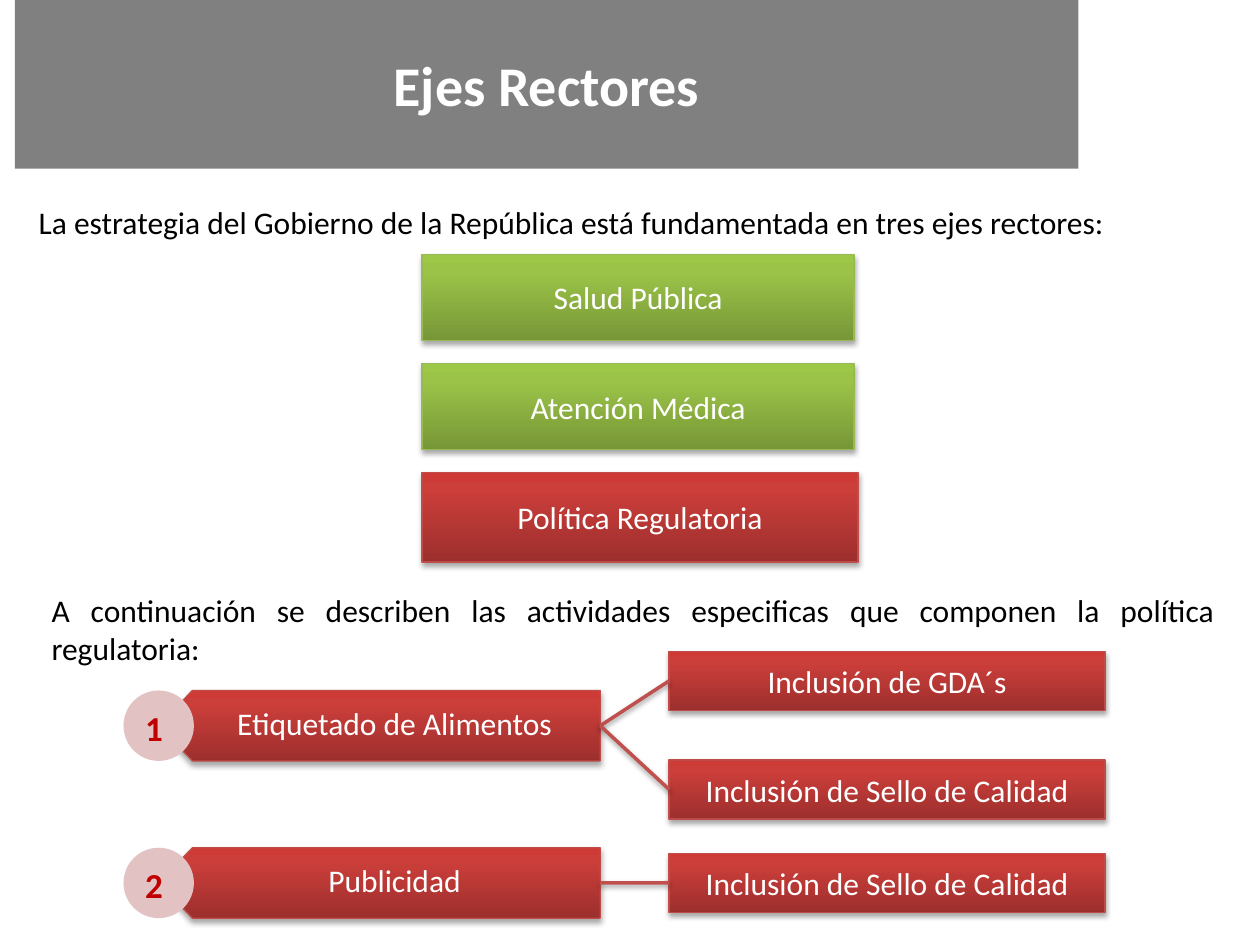
from copy import deepcopy

from lxml import etree
from pptx import Presentation
from pptx.dml.color import RGBColor
from pptx.enum.shapes import MSO_CONNECTOR, MSO_SHAPE
from pptx.enum.text import MSO_ANCHOR, MSO_AUTO_SIZE, PP_ALIGN
from pptx.oxml.ns import qn
from pptx.util import Cm, Pt

RECTANGLE, OVAL = MSO_SHAPE.RECTANGLE, MSO_SHAPE.OVAL
STRAIGHT = MSO_CONNECTOR.STRAIGHT
MIDDLE = MSO_ANCHOR.MIDDLE
NO_FIT, GROW = MSO_AUTO_SIZE.NONE, MSO_AUTO_SIZE.SHAPE_TO_FIT_TEXT
CENTER, JUSTIFY = PP_ALIGN.CENTER, PP_ALIGN.JUSTIFY
LEFT_SIDE = 1

COLORS = {
    "white": "FFFFFF", "black": "000000", "banner": "808080",
    "circle": "E2C2C2", "number": "C00000", "link": "C0504D",
    "green_line": "98B955", "red_line": "BF4C48",
}
GRADIENTS = {
    "green": ("779737", "9BC348", "9DC746"),
    "red": ("9C2F2D", "CB3E3A", "CE3B37"),
}
STOPS = (0, 0.8, 1)


def color(name):
    """Return the named colour."""
    return RGBColor.from_string(COLORS[name])


def write(shape, text, ink, size=18, bold=False, align=CENTER):
    """Put one formatted paragraph in a shape."""
    frame = shape.text_frame
    frame.word_wrap = True
    para = frame.paragraphs[0]
    para.alignment = align
    span = para.add_run()
    span.text = text
    span.font.name = "Calibri"
    span.font.size = Pt(size)
    span.font.bold = bold
    span.font.color.rgb = color(ink)
    return para


def add_shadow(shape, distance, opacity):
    """Give a shape or connector a soft shadow below it."""
    effects = etree.SubElement(shape._element.spPr, qn("a:effectLst"))
    shadow = etree.SubElement(
        effects, qn("a:outerShdw"), blurRad=str(Pt(3.1)), dist=str(Pt(distance)),
        dir="5400000", rotWithShape="0")
    tint = etree.SubElement(shadow, qn("a:srgbClr"), val=COLORS["black"])
    etree.SubElement(tint, qn("a:alpha"), val=str(opacity * 1000))


def style_block(shape, hue):
    """Apply the vertical gradient, outline and shadow of a block."""
    shape.fill.gradient()
    shape.fill.gradient_angle = 90
    stop_list = shape._element.spPr.find(".//" + qn("a:gsLst"))
    stop_list.append(deepcopy(stop_list[-1]))
    for stop, position, shade in zip(shape.fill.gradient_stops, STOPS, GRADIENTS[hue]):
        stop.position = position
        stop.color.rgb = RGBColor.from_string(shade)
    shape.line.color.rgb = color(hue + "_line")
    shape.line.width = Pt(0.75)
    add_shadow(shape, 1.8, 35)


def add_block(page, box, text, hue):
    """Add a gradient rectangle with centred text."""
    block = page.shapes.add_shape(RECTANGLE, *box)
    style_block(block, hue)
    block.text_frame.vertical_anchor = MIDDLE
    write(block, text, "white")
    return block


def add_text(page, box, text, ink="black", size=18, bold=False, align=JUSTIFY):
    """Add a wrapped text box that grows with its text."""
    label = page.shapes.add_textbox(*box)
    write(label, text, ink, size, bold, align)
    label.text_frame.auto_size = GROW


def add_banner(page, box, text):
    """Turn the title placeholder into the grey banner."""
    banner = page.shapes.title
    banner.left, banner.top, banner.width, banner.height = box
    banner.fill.solid()
    banner.fill.fore_color.rgb = color("banner")
    banner.text_frame.vertical_anchor = MIDDLE
    banner.text_frame.auto_size = NO_FIT
    write(banner, text, "white", 32, True)


def add_axes(page, left, top):
    """Stack the three guiding axes, the last one highlighted."""
    axes = (
        ("Salud Pública", "green", 8.71, 1.73),
        ("Atención Médica", "green", 8.71, 1.73),
        ("Política Regulatoria", "red", 8.79, 1.8),
    )
    for index, (text, hue, width, height) in enumerate(axes):
        box = left, top + index * Cm(2.2), Cm(width), Cm(height)
        add_block(page, box, text, hue)


def add_activity(page, box, number, text, details):
    """Add a numbered pointed bar linked to its detail blocks."""
    left, top, width, height = box
    right, bottom, middle = left + width, top + height, top + height // 2
    notch = left + Cm(0.68)
    builder = page.shapes.build_freeform(right, bottom, scale=1.0)
    builder.add_line_segments(
        [(notch, bottom), (left, middle), (notch, top), (right, top)], close=True)
    bar = builder.convert_to_shape()
    style_block(bar, "red")
    frame = bar.text_frame
    frame.vertical_anchor = MIDDLE
    frame.margin_left, frame.margin_right = Cm(0.97), Cm(0.36)
    frame.margin_top = frame.margin_bottom = Cm(0.2)
    write(bar, text, "white").line_spacing = Pt(18)

    circle = page.shapes.add_shape(OVAL, left - Cm(0.71), top, height, height)
    circle.shadow.inherit = False
    circle.fill.solid()
    circle.fill.fore_color.rgb = color("circle")
    circle.line.fill.background()
    number_box = left - Cm(1.3), top + Cm(0.2), Cm(2.41), Cm(1.12)
    add_text(page, number_box, number, "number", 20, True, CENTER)

    for detail, offset in details:
        detail_box = right + Cm(1.39), top + Cm(offset), Cm(8.79), Cm(1.19)
        block = add_block(page, detail_box, detail, "red")
        link = page.shapes.add_connector(STRAIGHT, right, middle, right, middle)
        link.end_connect(block, LEFT_SIDE)
        link.line.color.rgb = color("link")
        link.line.width = Pt(2)
        add_shadow(link, 1.6, 38)


def main():
    """Build and save the slide."""
    deck = Presentation()
    deck.slide_width, deck.slide_height = Cm(25.4), Cm(19.05)
    page = deck.slides.add_slide(deck.slide_layouts[5])
    add_banner(page, (Cm(0.3), 0, Cm(21.44), Cm(3.4)), "Ejes Rectores")
    add_text(page, (Cm(0.53), Cm(3.96), Cm(22.6), Cm(1.02)),
             "La estrategia del Gobierno de la República está fundamentada "
             "en tres ejes rectores:")
    add_axes(page, Cm(8.51), Cm(5.13))
    add_text(page, (Cm(0.79), Cm(11.79), Cm(23.95), Cm(1.8)),
             "A continuación se describen las actividades especificas que "
             "componen la política regulatoria:")
    seal = "Inclusión de Sello de Calidad"
    add_activity(page, (Cm(3.2), Cm(13.92), Cm(8.9), Cm(1.42)), "1",
                 "Etiquetado de Alimentos",
                 (("Inclusión de GDA´s", -0.79), (seal, 1.4)))
    add_activity(page, (Cm(3.2), Cm(17.09), Cm(8.9), Cm(1.42)), "2",
                 "Publicidad", ((seal, 0.11),))
    deck.save("out.pptx")


if __name__ == "__main__":
    main()
